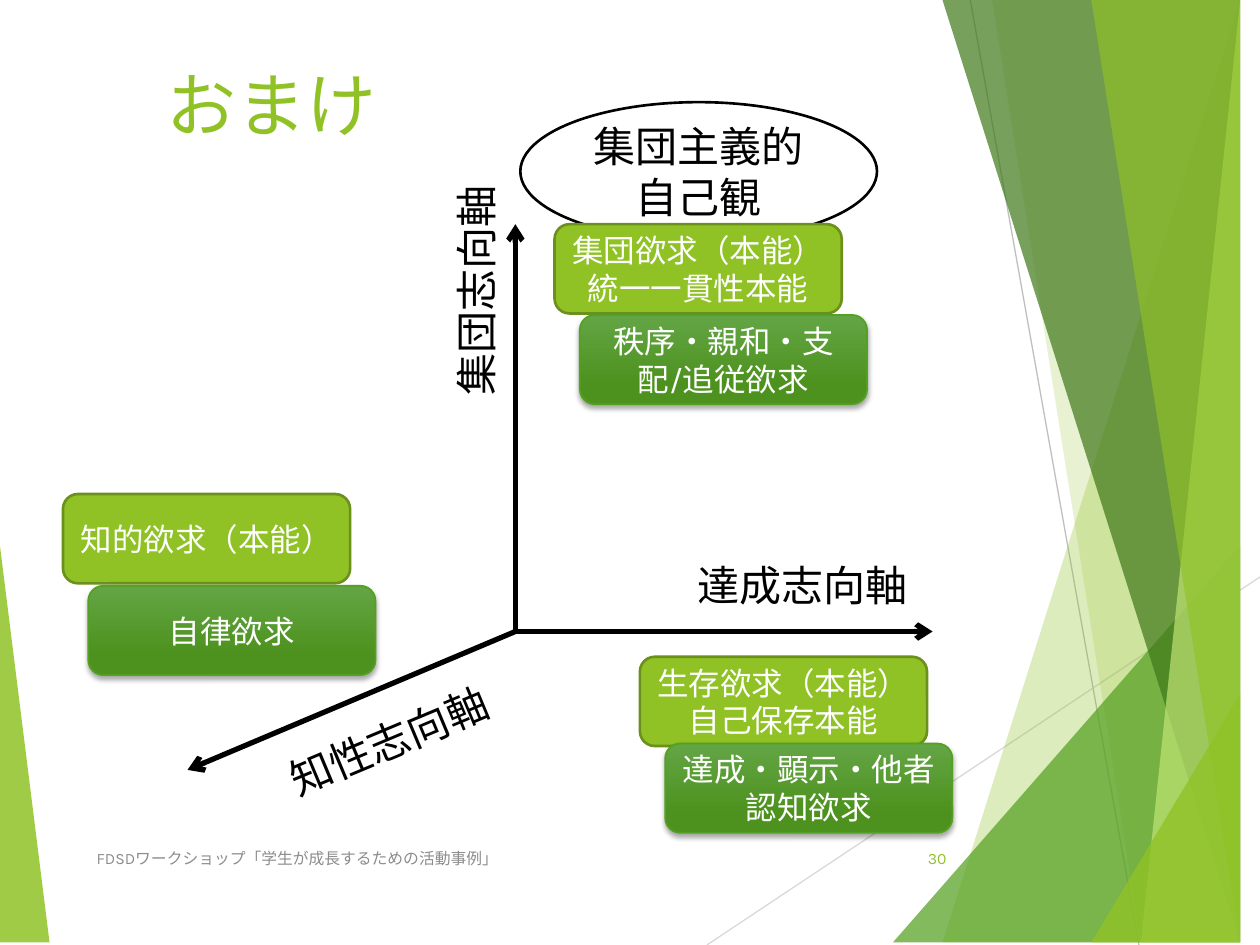
import lxml.etree
import pptx
import pptx.dml.color
import pptx.enum.dml
import pptx.enum.shapes
import pptx.enum.text
import pptx.oxml.ns
import pptx.util

Cm = pptx.util.Cm
Pt = pptx.util.Pt
RGBColor = pptx.dml.color.RGBColor
SHAPE = pptx.enum.shapes.MSO_SHAPE
ALIGN = pptx.enum.text.PP_ALIGN
ANCHOR = pptx.enum.text.MSO_ANCHOR
qn = pptx.oxml.ns.qn

FONT = "Karla"
WIDTH, HEIGHT = 25.4, 19.05

BLACK = RGBColor(0x00, 0x00, 0x00)
WHITE = RGBColor(0xFF, 0xFF, 0xFF)
GREY = RGBColor(0x8C, 0x8C, 0x8C)
SILVER = RGBColor(0xBF, 0xBF, 0xBF)
PALE_GREY = RGBColor(0xD9, 0xD9, 0xD9)
LIME = RGBColor(0x90, 0xC2, 0x26)
LIME_EDGE = RGBColor(0x6B, 0x90, 0x1C)
LIGHT_LIME = RGBColor(0xC0, 0xE4, 0x74)
GREEN = RGBColor(0x54, 0xA0, 0x21)
GREEN_TOP = RGBColor(0x63, 0xA5, 0x45)
GREEN_BOTTOM = RGBColor(0x4D, 0x92, 0x1E)
DARK_GREEN = RGBColor(0x3F, 0x78, 0x19)


def add_xml(parent, tag, **attributes):
    return lxml.etree.SubElement(parent, qn(tag), attributes)


def write(shape, lines, size, color, align=ALIGN.CENTER, anchor=ANCHOR.MIDDLE):
    """Put one paragraph per line into the shape."""
    frame = shape.text_frame
    frame.word_wrap = True
    frame.auto_size = pptx.enum.text.MSO_AUTO_SIZE.NONE
    frame.vertical_anchor = anchor
    frame.text = "\n".join(lines)
    for para in frame.paragraphs:
        para.alignment = align
        para.font.name = FONT
        para.font.size = Pt(size)
        para.font.color.rgb = color


def add_text(page, box, text, size, color, align=ALIGN.CENTER, rotation=0):
    label = page.shapes.add_textbox(*map(Cm, box))
    label.rotation = rotation
    write(label, [text], size, color, align)


def add_line(page, start, end, color, width, arrow=False):
    line = page.shapes.add_connector(
        pptx.enum.shapes.MSO_CONNECTOR.STRAIGHT, *map(Cm, start + end))
    line.line.color.rgb = color
    line.line.width = Pt(width)
    properties = line.element.spPr
    if arrow:
        add_xml(properties.find(qn("a:ln")), "a:tailEnd", type="arrow")
    add_xml(properties, "a:effectLst")


def add_facet(page, top, foot, side, color, opacity):
    """Fill from a slanted edge (top to foot) out to one side of the page."""
    builder = page.shapes.build_freeform(*top, scale=Cm(1))
    builder.add_line_segments([foot, (side, HEIGHT), (side, top[1])])
    facet = builder.convert_to_shape()
    facet.shadow.inherit = False
    facet.line.fill.background()
    facet.fill.solid()
    facet.fill.fore_color.rgb = color
    tint = facet.element.spPr.find(qn("a:solidFill"))[0]
    add_xml(tint, "a:alpha", val=str(opacity * 1000))


def add_backdrop(page):
    add_line(page, (14.25, HEIGHT), (WIDTH, 11.63), PALE_GREY, 0.75)
    add_line(page, (19.56, 0), (22.96, HEIGHT), SILVER, 0.75)
    facets = [
        ((0, 11.15), 1.24, 0, LIME, 85),
        ((24.77, 0), 19.15, WIDTH, LIME, 30),
        ((20.02, 0), 23.34, WIDTH, LIME, 20),
        ((WIDTH, 10.9), 18.44, WIDTH, GREEN, 72),
        ((19.48, 0), 24.64, WIDTH, DARK_GREEN, 70),
        ((24.92, 0), 23.04, WIDTH, LIGHT_LIME, 70),
        ((22.43, 0), 25.04, WIDTH, LIME, 65),
        ((WIDTH, 13.59), 22.38, WIDTH, LIME, 80),
    ]
    for top, foot_x, side, color, opacity in facets:
        add_facet(page, top, (foot_x, HEIGHT), side, color, opacity)


def add_panel(page, kind, box, edge, edge_width):
    panel = page.shapes.add_shape(kind, *map(Cm, box))
    panel.shadow.inherit = False
    panel.line.color.rgb = edge
    panel.line.width = Pt(edge_width)
    panel.fill.solid()
    return panel


def add_need(page, left, top, drop, instinct, desire):
    """Stack a flat instinct card and, lower right, a shaded desire card."""
    width, height, shift = 5.79, 1.8, 0.51
    card = add_panel(page, SHAPE.ROUNDED_RECTANGLE,
                     (left, top, width, height), LIME_EDGE, 1.5)
    card.fill.fore_color.rgb = LIME
    write(card, instinct, 18, WHITE)

    card = add_panel(page, SHAPE.ROUNDED_RECTANGLE,
                     (left + shift, top + drop, width, height), GREEN, 1)
    card.fill.gradient()
    card.fill.gradient_angle = 270
    for stop, position, color in zip(card.fill.gradient_stops, (0, 0.78),
                                     (GREEN_TOP, GREEN_BOTTOM)):
        stop.position = position
        stop.color.rgb = color
    shadow = add_xml(card.element.spPr.find(qn("a:effectLst")), "a:outerShdw",
                     blurRad=str(Pt(3)), dist=str(Pt(2)), dir="5400000",
                     rotWithShape="0")
    add_xml(add_xml(shadow, "a:srgbClr", val=str(BLACK)), "a:alpha", val="35000")
    write(card, [desire], 18, WHITE)


def add_axes_diagram(page, left, top):
    origin = (left + 9.12, top + 10.67)
    for x, y in [(17.53, 10.67), (9.12, 2.46), (2.51, 13.46)]:
        add_line(page, origin, (left + x, top + y), BLACK, 3, arrow=True)

    view = add_panel(page, SHAPE.OVAL, (left + 9.22, top, 7.19, 2.79), BLACK, 1.5)
    view.fill.fore_color.rgb = WHITE
    write(view, ["集団主義的", "自己観"], 24, BLACK)

    needs = [
        (9.91, 2.46, 1.83, ["集団欲求（本能）", "統一一貫性本能"],
         "秩序・親和・支配/追従欲求"),
        (0, 7.9, 1.85, ["知的欲求（本能）"], "自律欲求"),
        (11.63, 11.18, 1.75, ["生存欲求（本能）", "自己保存本能"],
         "達成・顕示・他者認知欲求"),
    ]
    for x, y, drop, instinct, desire in needs:
        add_need(page, left + x, top + y, drop, instinct, desire)

    labels = [
        ("集団志向軸", 5.82, 3.12, 270),
        ("達成志向軸", 12.4, 9.04, 0),
        ("知性志向軸", 4.06, 12.19, 337.3),
    ]
    for text, x, y, rotation in labels:
        add_text(page, (left + x, top + y, 5.02, 1.36), text, 24, BLACK,
                 rotation=rotation)


def add_title(page, box):
    title = page.shapes.title
    title.left, title.top, title.width, title.height = map(Cm, box)
    write(title, ["おまけ"], 40, LIME, ALIGN.LEFT, ANCHOR.TOP)


def add_footer(page, left, top):
    height = 1.02
    add_text(page, (left, top, 12.85, height),
             "FDSDワークショップ「学生が成長するための活動事例」", 9, GREY, ALIGN.LEFT)
    add_text(page, (left + 16.21, top, 1.42, height), "30", 9, LIME, ALIGN.RIGHT)


def main():
    deck = pptx.Presentation()
    deck.slide_width, deck.slide_height = Cm(WIDTH), Cm(HEIGHT)
    page = deck.slides.add_slide(deck.slide_layouts[5])
    add_backdrop(page)
    add_title(page, (3.1, 1.12, 5.21, 1.91))
    add_axes_diagram(page, 1.27, 2.06)
    add_footer(page, 1.7, 16.79)
    deck.save("out.pptx")


if __name__ == "__main__":
    main()
